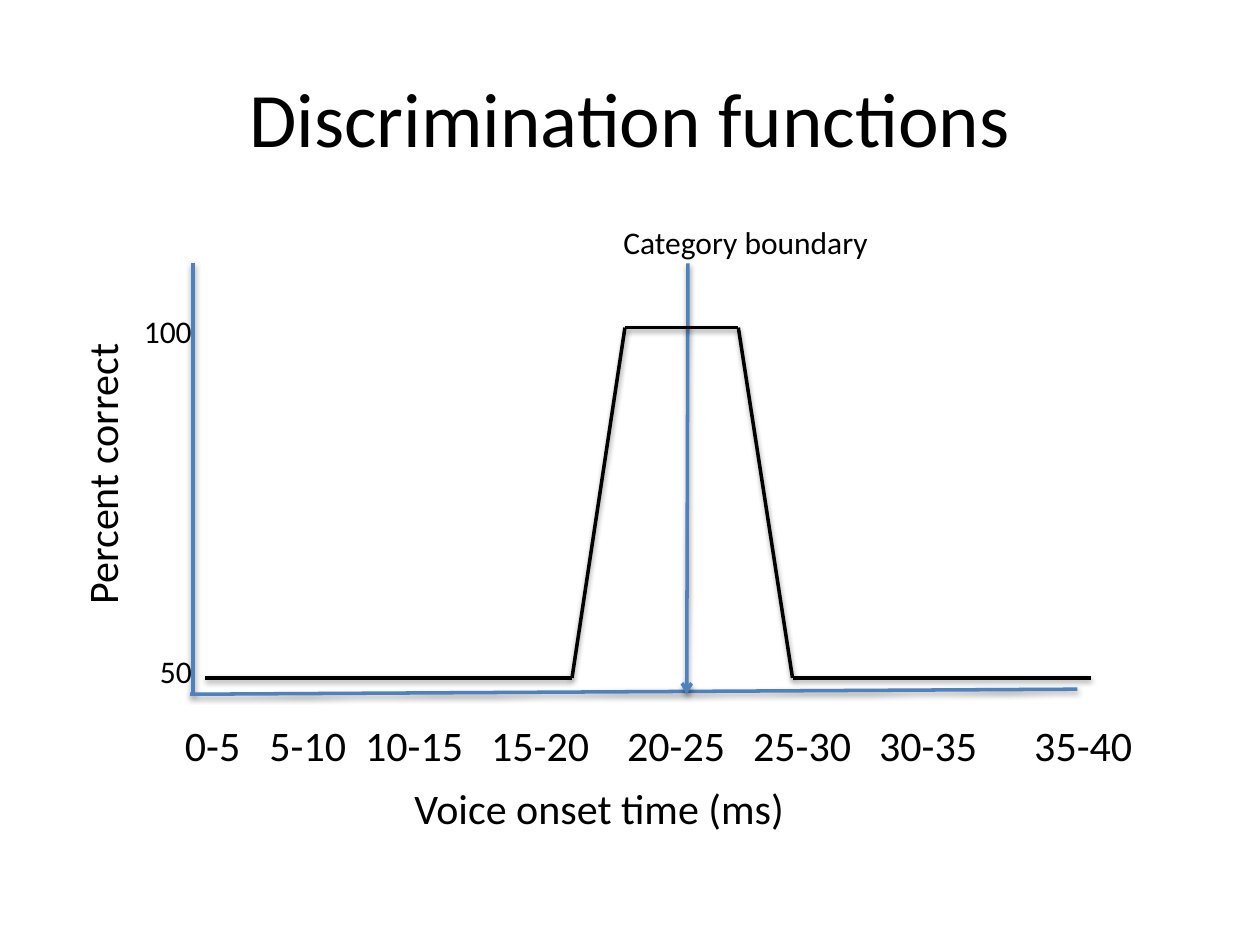
from itertools import pairwise

from lxml.etree import SubElement
from pptx import Presentation
from pptx.dml.color import RGBColor
from pptx.enum.shapes import MSO_CONNECTOR as Connector
from pptx.enum.text import MSO_ANCHOR as Anchor, PP_ALIGN as Align
from pptx.oxml.ns import qn
from pptx.util import Inches, Pt

FONT = "Calibri"
BLACK = "000000"
BLUE = "4F81BD"

VOICE_ONSET_RANGES = ["0-5", "5-10", "10-15", "15-20",
                      "20-25", "25-30", "30-35", "35-40"]
RANGE_TABS = [0.67, 1.43, 2.43, 3.51, 4.51, 5.51, 6.74]
CURVE = [(1.63, 5.38), (4.54, 5.38), (4.96, 2.6),
         (5.86, 2.6), (6.29, 5.38), (8.66, 5.38)]


def rgb(hex_colour):
    return RGBColor.from_string(hex_colour)


def write(frame, *lines, size=24, align=Align.LEFT, gap=0, wrap=True):
    """Fill a text frame, one paragraph a line, with gap points between them."""
    frame.word_wrap = wrap
    for index, line in enumerate(lines):
        paragraph = frame.add_paragraph() if index else frame.paragraphs[0]
        paragraph.alignment = align
        if index:
            paragraph.space_before = Pt(gap)
        run = paragraph.add_run()
        run.text = line
        run.font.name = FONT
        run.font.size = Pt(size)
        run.font.color.rgb = rgb(BLACK)


def add_label(shapes, box, *lines, rotation=0, **text_format):
    label = shapes.add_textbox(*map(Inches, box))
    label.rotation = rotation
    write(label.text_frame, *lines, **text_format)
    return label


def add_line(shapes, start, end, colour):
    """Draw a 2 pt line that keeps the soft shadow of the theme."""
    line = shapes.add_connector(Connector.STRAIGHT,
                                *map(Inches, (*start, *end)))
    line.line.color.rgb = rgb(colour)
    line.line.width = Pt(2)
    return line


def add_title(slide, text):
    title = slide.shapes.title
    title.left, title.top, title.width, title.height = map(
        Inches, (0.5, 0.3, 9, 1.25))
    title.text_frame.vertical_anchor = Anchor.MIDDLE
    write(title.text_frame, text, size=44, align=Align.CENTER)


def add_axes(slide):
    axes = slide.shapes.add_group_shape().shapes
    add_line(axes, (1.53, 2.09), (1.53, 5.51), BLUE)
    add_line(axes, (8.55, 5.47), (1.51, 5.51), BLUE)


def add_range_labels(slide):
    """Set the ranges in one row, each at its own tab stop."""
    ranges = add_label(slide.shapes, (1.37, 5.66, 8.24, 0.5),
                       "\t".join(VOICE_ONSET_RANGES))
    properties = ranges.text_frame.paragraphs[0]._p.get_or_add_pPr()
    tab_list = SubElement(properties, qn("a:tabLst"))
    for position in RANGE_TABS:
        SubElement(tab_list, qn("a:tab"), pos=str(Inches(position)), algn="l")


def add_category_boundary(slide):
    boundary = slide.shapes.add_group_shape().shapes
    arrow = add_line(boundary, (5.46, 2.09), (5.45, 5.51), BLUE)
    SubElement(arrow.line._get_or_add_ln(), qn("a:tailEnd"), type="arrow")
    add_label(boundary, (4.85, 1.72, 2.17, 0.4), "Category boundary",
              size=18, wrap=False)


def add_curve(slide):
    curve = slide.shapes.add_group_shape().shapes
    for start, end in pairwise(CURVE):
        add_line(curve, start, end, BLACK)


def main():
    presentation = Presentation()
    presentation.slide_width = Inches(10)
    presentation.slide_height = Inches(7.5)
    slide = presentation.slides.add_slide(presentation.slide_layouts[5])

    add_title(slide, "Discrimination functions")
    add_axes(slide)
    add_label(slide.shapes, (3.19, 6.16, 3.16, 0.5),
              "Voice onset time (ms)", wrap=False)
    add_label(slide.shapes, (-0.34, 3.5, 2.29, 0.5),
              "Percent correct", rotation=270, wrap=False)
    add_range_labels(slide)
    add_label(slide.shapes, (1.03, 2.43, 0.59, 3.13), "100", "50",
              size=18, align=Align.RIGHT, gap=172.5)
    add_category_boundary(slide)
    add_curve(slide)

    presentation.save("out.pptx")


if __name__ == "__main__":
    main()
